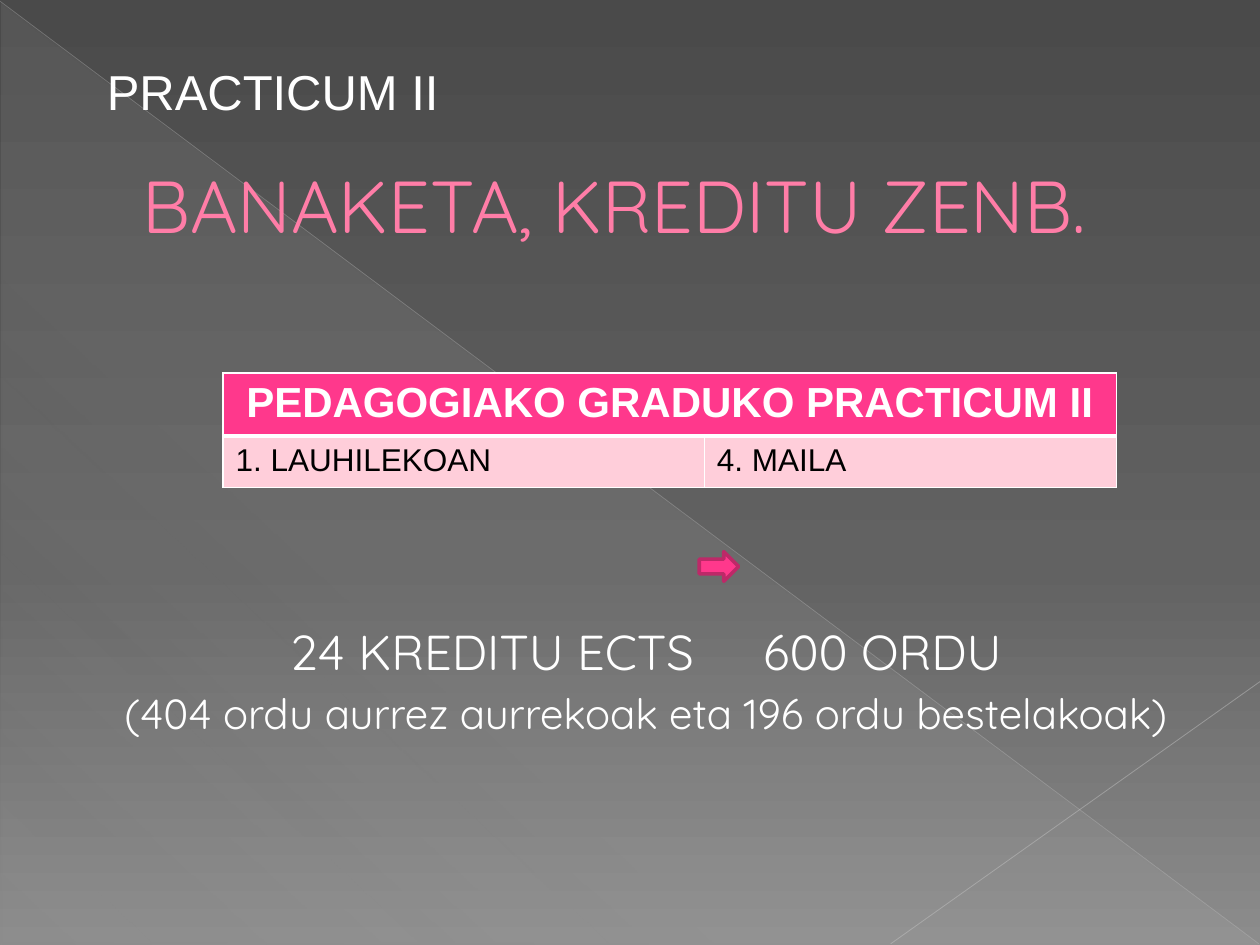
from typing import NamedTuple

from lxml import etree
from pptx import Presentation
from pptx.dml.color import RGBColor
from pptx.enum.shapes import MSO_CONNECTOR, MSO_SHAPE
from pptx.enum.text import MSO_ANCHOR, MSO_AUTO_SIZE, PP_ALIGN
from pptx.oxml.ns import qn
from pptx.util import Pt

STRAIGHT = MSO_CONNECTOR.STRAIGHT
RIGHT_TRIANGLE = MSO_SHAPE.RIGHT_TRIANGLE
RIGHT_ARROW = MSO_SHAPE.RIGHT_ARROW
LEFT, CENTER = PP_ALIGN.LEFT, PP_ALIGN.CENTER
MIDDLE = MSO_ANCHOR.MIDDLE
NO_AUTOFIT = MSO_AUTO_SIZE.NONE
GROW = MSO_AUTO_SIZE.SHAPE_TO_FIT_TEXT

WHITE = RGBColor(0xFF, 0xFF, 0xFF)
BLACK = RGBColor(0x00, 0x00, 0x00)
PINK = RGBColor(0xFF, 0x38, 0x8C)
DARK_PINK = RGBColor(0xBD, 0x29, 0x68)
TITLE_PINK = RGBColor(0xFF, 0x7D, 0xA7)
PALE_PINK = RGBColor(0xFF, 0xCE, 0xDA)
SILVER = RGBColor(0xD2, 0xD2, 0xD2)
LINE_GREY = RGBColor(0xBF, 0xBF, 0xBF)
LIGHT_LINE_GREY = RGBColor(0xC6, 0xC6, 0xC6)
TOP_GREY = RGBColor(0x4A, 0x4A, 0x4A)
MIDDLE_GREY = RGBColor(0x62, 0x62, 0x62)
BOTTOM_GREY = RGBColor(0x8C, 0x8C, 0x8C)


class Stop(NamedTuple):
    position: int
    color: RGBColor
    opacity: int = 100


class FoldLine(NamedTuple):
    start: tuple[float, float]
    end: tuple[float, float]
    color: RGBColor
    width: float
    opacity: int


class TextStyle(NamedTuple):
    font: str
    size: float
    color: RGBColor
    bold: bool = False
    align: PP_ALIGN = LEFT


BACKGROUND_STOPS = [Stop(0, TOP_GREY), Stop(60, MIDDLE_GREY), Stop(100, BOTTOM_GREY)]
TRIANGLE_STOPS = [Stop(0, SILVER, 10), Stop(70, SILVER, 8), Stop(100, SILVER, 1)]
FOLD_LINES = [
    FoldLine((0, 0.7), (719.3, 539.3), LINE_GREY, 0.39, 35),
    FoldLine((720, 389.5), (509, 539.3), LIGHT_LINE_GREY, 0.47, 45),
]
TITLE_STYLE = TextStyle("Quicksand", 42, TITLE_PINK)
LABEL_STYLE = TextStyle("Arial", 28, WHITE)
CREDITS_STYLE = TextStyle("Quicksand", 28, WHITE, align=CENTER)
HOURS_STYLE = CREDITS_STYLE._replace(size=24)
HEADER_STYLE = TextStyle("Arial", 24, WHITE, True, CENTER)
CELL_STYLE = TextStyle("Arial", 18, BLACK)


def add_color(parent, color: RGBColor, opacity: int = 100) -> None:
    element = etree.SubElement(parent, qn("a:srgbClr"), val=str(color))
    if opacity < 100:
        etree.SubElement(element, qn("a:alpha"), val=str(opacity * 1000))


def set_gradient(fill, owner, stops: list[Stop], angle: float) -> None:
    """Fill the owner element with the stops; angle runs clockwise."""
    fill.gradient()
    fill.gradient_angle = 360 - angle
    stop_list = next(owner.iter(qn("a:gsLst")))
    stop_list.clear()
    for stop in stops:
        element = etree.SubElement(stop_list, qn("a:gs"), pos=str(stop.position * 1000))
        add_color(element, stop.color, stop.opacity)


def add_fold_line(slide, fold: FoldLine) -> None:
    points = [Pt(value) for value in fold.start + fold.end]
    connector = slide.shapes.add_connector(STRAIGHT, *points)
    connector.line.color.rgb = fold.color
    connector.line.width = Pt(fold.width)
    color = next(connector.element.spPr.iter(qn("a:srgbClr")))
    etree.SubElement(color, qn("a:alpha"), val=str(fold.opacity * 1000))
    etree.SubElement(connector.element.spPr, qn("a:effectLst"))


def style_paragraph(paragraph, style: TextStyle) -> None:
    paragraph.alignment = style.align
    for run in paragraph.runs:
        run.font.name = style.font
        run.font.size = Pt(style.size)
        run.font.bold = style.bold
        run.font.color.rgb = style.color


def format_cell(cell, fill: RGBColor, top: float, bottom: float) -> None:
    properties = cell._tc.get_or_add_tcPr()
    for side, width in (("L", 1), ("R", 1), ("T", top), ("B", bottom)):
        border = etree.SubElement(properties, qn(f"a:ln{side}"), w=str(Pt(width)))
        add_color(etree.SubElement(border, qn("a:solidFill")), WHITE)
    cell.fill.solid()
    cell.fill.fore_color.rgb = fill


def add_backdrop(slide) -> None:
    set_gradient(slide.background.fill, slide.element, BACKGROUND_STOPS, 90)
    triangle = slide.shapes.add_shape(
        RIGHT_TRIANGLE, Pt(0.7), Pt(1.4), Pt(719.3), Pt(538.6))
    triangle.shadow.inherit = False
    triangle.line.fill.background()
    set_gradient(triangle.fill, triangle.element, TRIANGLE_STOPS, 133)
    for fold in FOLD_LINES:
        add_fold_line(slide, fold)


def add_title(slide) -> None:
    title = slide.shapes.title
    slide.shapes.element.append(title.element)  # in front of the backdrop
    title.left, title.top, title.width, title.height = Pt(36), Pt(77), Pt(648), Pt(79)
    frame = title.text_frame
    frame.text = "BANAKETA, KREDITU ZENB."
    frame.auto_size = NO_AUTOFIT
    frame.vertical_anchor = MIDDLE
    frame.margin_left = Pt(45.4)
    style_paragraph(frame.paragraphs[0], TITLE_STYLE)


def add_credits(slide) -> None:
    frame = slide.shapes.add_textbox(Pt(45), Pt(151.2), Pt(648), Pt(339)).text_frame
    frame.word_wrap = True
    frame.margin_top = Pt(204)
    credits = frame.paragraphs[0]
    for text in ("24 KREDITU ECTS", " ", "600 ORDU"):
        credits.add_run().text = text
    style_paragraph(credits, CREDITS_STYLE)
    # Widen the single space between the two amounts
    credits.runs[1].font._element.set("spc", "3200")
    hours = frame.add_paragraph()
    hours.text = "(404 ordu aurrez aurrekoak eta 196 ordu bestelakoak)"
    hours.space_before = Pt(4)
    style_paragraph(hours, HOURS_STYLE)


def add_practicum_table(slide) -> None:
    table = slide.shapes.add_table(
        2, 2, Pt(127.5), Pt(213.2), Pt(510.5), Pt(63.2)).table
    for column, width in zip(table.columns, (275, 235.5)):
        column.width = Pt(width)
    for row, height in zip(table.rows, (33.7, 29.5)):
        row.height = Pt(height)
    for header, cell in zip(table.rows[0].cells, table.rows[1].cells):
        format_cell(header, PINK, 1, 3)
        format_cell(cell, PALE_PINK, 3, 1)
    table.cell(0, 0).merge(table.cell(0, 1))
    for row, column, text, style in (
        (0, 0, "PEDAGOGIAKO GRADUKO PRACTICUM II", HEADER_STYLE),
        (1, 0, "1. LAUHILEKOAN", CELL_STYLE),
        (1, 1, "4. MAILA", CELL_STYLE),
    ):
        frame = table.cell(row, column).text_frame
        frame.text = text
        style_paragraph(frame.paragraphs[0], style)


def add_arrow(slide) -> None:
    arrow = slide.shapes.add_shape(
        RIGHT_ARROW, Pt(399.6), Pt(315.2), Pt(22.5), Pt(17))
    arrow.shadow.inherit = False
    arrow.fill.solid()
    arrow.fill.fore_color.rgb = PINK
    arrow.line.color.rgb = DARK_PINK
    arrow.line.width = Pt(2)


def add_label(slide) -> None:
    frame = slide.shapes.add_textbox(Pt(54), Pt(31.7), Pt(221), Pt(41)).text_frame
    frame.word_wrap = True
    frame.auto_size = GROW
    frame.text = "PRACTICUM II"
    style_paragraph(frame.paragraphs[0], LABEL_STYLE)


def main() -> None:
    presentation = Presentation()
    presentation.slide_width, presentation.slide_height = Pt(720), Pt(540)
    slide = presentation.slides.add_slide(presentation.slide_layouts[5])
    for add_part in (add_backdrop, add_title, add_credits,
                     add_practicum_table, add_arrow, add_label):
        add_part(slide)
    presentation.save("out.pptx")


if __name__ == "__main__":
    main()
